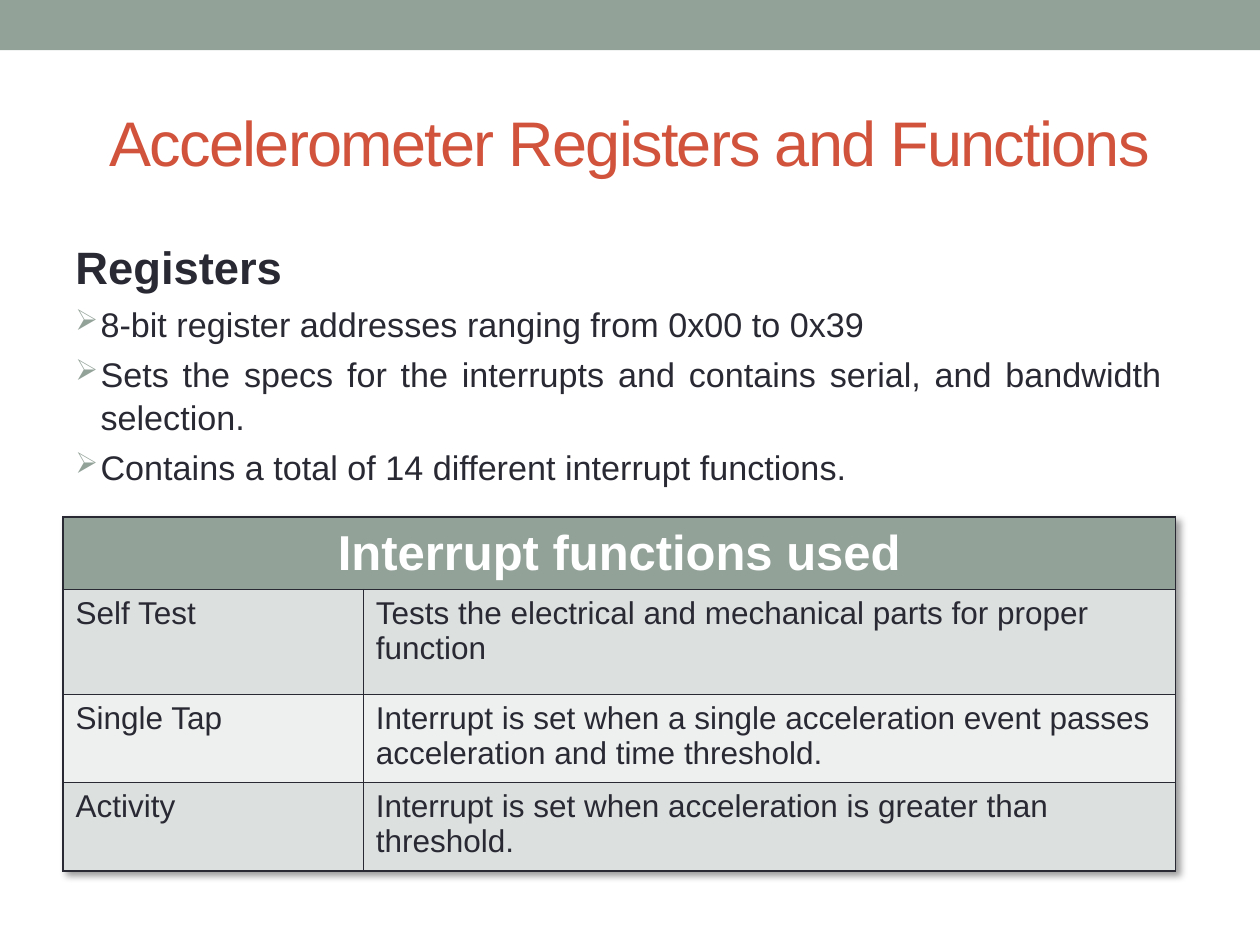
import dataclasses
import typing

import lxml.etree
import pptx
import pptx.dml.color
import pptx.enum.shapes
import pptx.enum.text
import pptx.oxml
import pptx.oxml.ns
import pptx.util

ALIGN = pptx.enum.text.PP_ALIGN
ANCHOR = pptx.enum.text.MSO_ANCHOR
WIDTH, HEIGHT = pptx.util.Inches(10), pptx.util.Inches(7.5)


@dataclasses.dataclass(frozen=True)
class Theme:
    font: str = "Arial"
    sage: str = "93A299"
    rust: str = "D2533C"
    ink: str = "292934"
    white: str = "FFFFFF"
    bands: tuple[str, str] = ("DCE0DE", "EEF0EF")
    title_size: float = 36
    heading_size: float = 25.9
    bullet_size: float = 19.5
    header_size: float = 28
    cell_size: float = 18


@dataclasses.dataclass(frozen=True)
class Area:
    """A rectangle given as shares of the slide's size."""
    left: float
    top: float
    width: float
    height: float

    def lengths(self) -> tuple[int, int, int, int]:
        return (int(self.left * WIDTH), int(self.top * HEIGHT),
                int(self.width * WIDTH), int(self.height * HEIGHT))


@dataclasses.dataclass(frozen=True)
class Interrupt:
    name: str
    meaning: str
    height: float  # share of the slide's height


THEME = Theme()
BAND = Area(0, 0, 1, 0.053)
TITLE = Area(0.05, 0.077, 0.9, 0.144)
BODY = Area(0.05, 0.244, 0.883, 0.323)
TABLE = Area(0.05, 0.547, 0.883, 0.367)
NAME_SHARE = 0.27
HEADER_HEIGHT = 0.077

BULLETS = (
    "8-bit register addresses ranging from 0x00 to 0x39",
    "Sets the specs for the interrupts and contains serial, and bandwidth selection.",
    "Contains a total of 14 different interrupt functions.",
)
INTERRUPTS = (
    Interrupt("Self Test", "Tests the electrical and mechanical parts for proper function", 0.111),
    Interrupt("Single Tap", "Interrupt is set when a single acceleration event passes "
              "acceleration and time threshold.", 0.089),
    Interrupt("Activity", "Interrupt is set when acceleration is greater than threshold.", 0.089),
)


def rgb(color: str) -> pptx.dml.color.RGBColor:
    return pptx.dml.color.RGBColor.from_string(color)


def add_child(parent: typing.Any, tag: str, **attributes: str) -> typing.Any:
    child = lxml.etree.SubElement(parent, pptx.oxml.ns.qn(tag))
    for name, value in attributes.items():
        child.set(name, value)
    return child


def write(para: typing.Any, text: str, size: float, color: str,
          bold: bool = False, align: typing.Any = ALIGN.LEFT) -> None:
    para.text = text
    para.alignment = align
    for span in para.runs:
        span.font.name = THEME.font
        span.font.size = pptx.util.Pt(size)
        span.font.bold = bold
        span.font.color.rgb = rgb(color)


def add_box(page: typing.Any, area: Area, anchor: typing.Any) -> typing.Any:
    frame = page.shapes.add_textbox(*area.lengths()).text_frame
    frame.word_wrap = True
    frame.vertical_anchor = anchor
    return frame


def add_arrow_bullet(para: typing.Any) -> None:
    properties = para._p.get_or_add_pPr()
    indent = pptx.util.Inches(0.2)
    properties.set("marL", str(indent))
    properties.set("indent", str(-indent))
    add_child(add_child(properties, "a:buClr"), "a:srgbClr", val=THEME.sage)
    add_child(properties, "a:buSzPct", val="85000")
    add_child(properties, "a:buChar", char="➢")


def fill_cell(cell: typing.Any, color: str) -> None:
    cell.fill.solid()
    cell.fill.fore_color.rgb = rgb(color)
    properties = cell._tc.get_or_add_tcPr()
    for place, side in enumerate(("a:lnL", "a:lnR", "a:lnT", "a:lnB")):
        line = add_child(properties, side, w=str(pptx.util.Pt(1)))
        add_child(add_child(line, "a:solidFill"), "a:srgbClr", val=THEME.ink)
        properties.insert(place, line)  # borders come before the fill


def add_table_shadow(table: typing.Any) -> None:
    properties = table._tbl.tblPr
    effects = add_child(properties, "a:effectLst")
    shadow = add_child(effects, "a:outerShdw", blurRad="50800", dist="38100",
                       dir="2700000", algn="tl", rotWithShape="0")
    add_child(add_child(shadow, "a:srgbClr", val="000000"), "a:alpha", val="40000")
    properties.insert(0, effects)


def draw_title(page: typing.Any) -> None:
    band = page.shapes.add_shape(pptx.enum.shapes.MSO_SHAPE.RECTANGLE, *BAND.lengths())
    band.shadow.inherit = False
    band.fill.solid()
    band.fill.fore_color.rgb = rgb(THEME.sage)
    band.line.fill.background()

    para = add_box(page, TITLE, ANCHOR.MIDDLE).paragraphs[0]
    write(para, "Accelerometer Registers and Functions",
          THEME.title_size, THEME.rust, align=ALIGN.CENTER)
    para.runs[0].font._element.set("spc", "-100")


def draw_body(page: typing.Any) -> None:
    frame = add_box(page, BODY, ANCHOR.TOP)
    heading = frame.paragraphs[0]
    write(heading, "Registers", THEME.heading_size, THEME.ink, bold=True)
    heading.space_before = pptx.util.Pt(1)
    for text in BULLETS:
        para = frame.add_paragraph()
        write(para, text, THEME.bullet_size, THEME.ink, align=ALIGN.JUSTIFY)
        para.space_before = pptx.util.Pt(4)
        add_arrow_bullet(para)
    for para in frame.paragraphs:
        para.line_spacing = 1.05


def draw_interrupts(page: typing.Any) -> None:
    frame = page.shapes.add_table(len(INTERRUPTS) + 1, 2, *TABLE.lengths())
    table = frame.table
    add_table_shadow(table)
    for column, share in zip(table.columns, (NAME_SHARE, 1 - NAME_SHARE)):
        column.width = int(share * TABLE.width * WIDTH)
    heights = (HEADER_HEIGHT, *(item.height for item in INTERRUPTS))
    for row, height in zip(table.rows, heights):
        row.height = int(height * HEIGHT)

    # Header across both columns
    header = table.cell(0, 0)
    header.merge(table.cell(0, 1))
    header.vertical_anchor = ANCHOR.MIDDLE
    write(header.text_frame.paragraphs[0], "Interrupt functions used",
          THEME.header_size, THEME.white, bold=True, align=ALIGN.CENTER)
    for column in range(2):
        fill_cell(table.cell(0, column), THEME.sage)

    # One banded row for each interrupt
    for index, item in enumerate(INTERRUPTS):
        for column, text in enumerate((item.name, item.meaning)):
            cell = table.cell(index + 1, column)
            write(cell.text_frame.paragraphs[0], text, THEME.cell_size, THEME.ink)
            fill_cell(cell, THEME.bands[index % 2])


def main() -> None:
    deck = pptx.Presentation()
    deck.slide_width, deck.slide_height = WIDTH, HEIGHT
    page = deck.slides.add_slide(deck.slide_layouts[6])
    draw_title(page)
    draw_body(page)
    draw_interrupts(page)
    deck.save("out.pptx")


if __name__ == "__main__":
    main()
